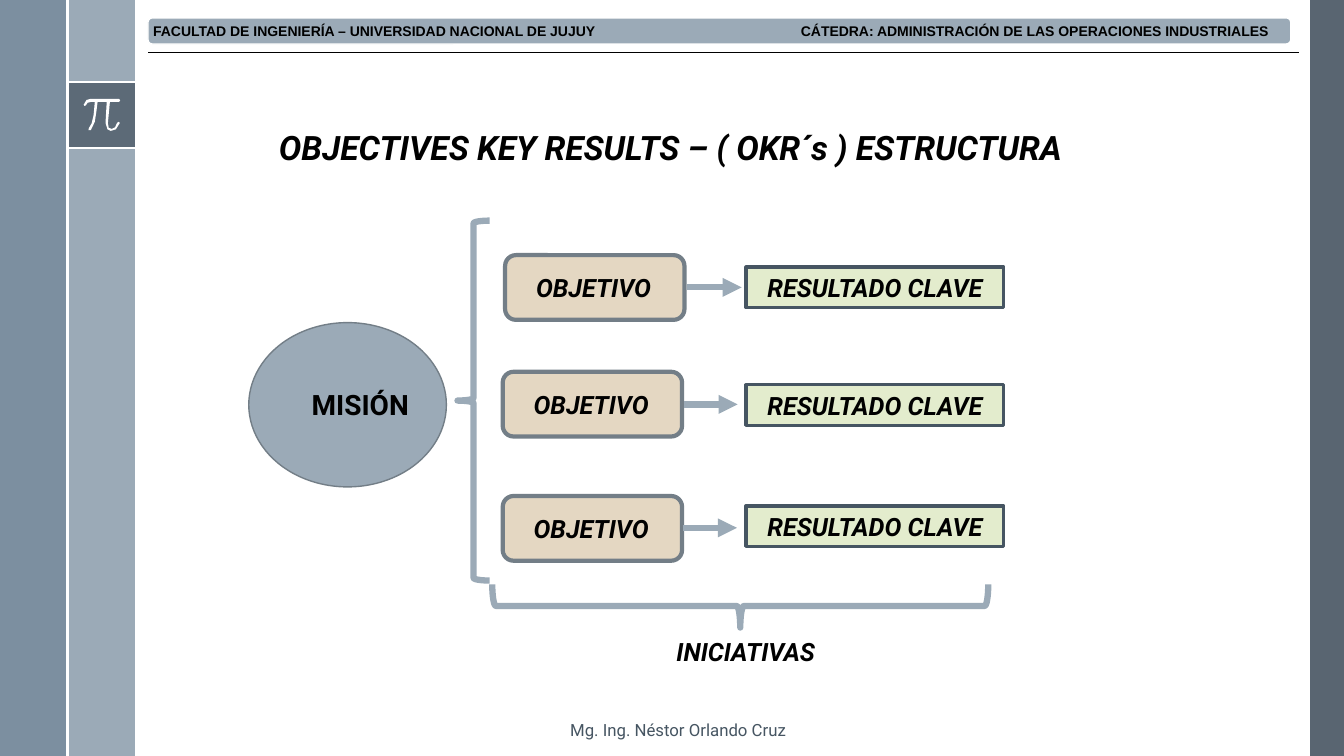
from lxml import etree
from pptx import Presentation
from pptx.dml.color import RGBColor
from pptx.enum.shapes import MSO_CONNECTOR, MSO_SHAPE as Shape
from pptx.enum.text import MSO_ANCHOR, PP_ALIGN as Align
from pptx.oxml.ns import qn
from pptx.util import Cm, Pt

WHITE = RGBColor(0xFF, 0xFF, 0xFF)
BLACK = RGBColor(0x00, 0x00, 0x00)
STEEL = RGBColor(0x9B, 0xAA, 0xB7)
BLUE_GREY = RGBColor(0x6A, 0x80, 0x93)
SLATE = RGBColor(0x47, 0x55, 0x62)
DARK_SLATE = RGBColor(0x46, 0x55, 0x62)
GREY = RGBColor(0x73, 0x7E, 0x87)
SAND = RGBColor(0xE4, 0xD7, 0xC2)
PALE_GREEN = RGBColor(0xE3, 0xEC, 0xCD)

WIDTH, HEIGHT, BAND = 33.87, 19.05, 1.7

# Outline of the pi sign, in hundredths of a centimetre
PI_OUTLINE = [
    (300, 249), (229, 249), (218, 252), (211, 264), (213, 267), (216, 266),
    (221, 259), (229, 257), (239, 257), (236, 290), (231, 311), (224, 323),
    (223, 328), (229, 328), (239, 307), (243, 281), (246, 257), (269, 257),
    (266, 310), (271, 326), (279, 330), (292, 326), (302, 310), (299, 307),
    (295, 310), (290, 321), (282, 325), (274, 322), (272, 310), (277, 257),
    (300, 257), (303, 253),
]

# Objective left and top, result top, arrow start, end and height
OKR_ROWS = [
    (12.73, 6.43, 6.73, 17.32, 18.69, 7.24),
    (12.67, 9.37, 9.7, 17.25, 18.59, 10.19),
    (12.67, 12.5, 12.75, 17.2, 18.57, 13.3),
]


def add_box(slide, kind, left, top, width, height, fill=None, line=None,
            line_width=1, opacity=100):
    box = slide.shapes.add_shape(kind, Cm(left), Cm(top), Cm(width), Cm(height))
    box.shadow.inherit = False
    if fill is None:
        box.fill.background()
    else:
        box.fill.solid()
        box.fill.fore_color.rgb = fill
    if opacity < 100:
        color = box.fill._xPr.find(qn("a:solidFill"))[0]
        etree.SubElement(color, qn("a:alpha"), val=str(opacity * 1000))
    if line is None:
        box.line.fill.background()
    else:
        box.line.color.rgb = line
        box.line.width = Pt(line_width)
    return box


def write(shape, text, size, bold=True, italic=False, color=BLACK,
          align=Align.LEFT, font="Roboto"):
    frame = shape.text_frame
    frame.word_wrap = True
    frame.text = text
    paragraph = frame.paragraphs[0]
    paragraph.alignment = align
    for run in paragraph.runs:
        run.font.name = font
        run.font.size = Pt(size)
        run.font.bold = bold
        run.font.italic = italic
        run.font.color.rgb = color


def set_insets(shape, left, right=0):
    frame = shape.text_frame
    frame.margin_left, frame.margin_right = Cm(left), Cm(right)
    frame.margin_top = frame.margin_bottom = 0
    frame.vertical_anchor = MSO_ANCHOR.MIDDLE


def add_label(slide, left, top, width, height, text, size, **style):
    label = slide.shapes.add_textbox(Cm(left), Cm(top), Cm(width), Cm(height))
    write(label, text, size, **style)


def add_line(slide, x1, y1, x2, y2, color, width, arrow=False):
    line = slide.shapes.add_connector(
        MSO_CONNECTOR.STRAIGHT, Cm(x1), Cm(y1), Cm(x2), Cm(y2))
    line.line.color.rgb = color
    line.line.width = Pt(width)
    if arrow:
        etree.SubElement(line.line._get_or_add_ln(), qn("a:tailEnd"),
                         type="triangle")
    etree.SubElement(line._element.spPr, qn("a:effectLst"))


def add_frame(slide):
    """Side bands and the tile with the pi sign."""
    add_box(slide, Shape.RECTANGLE, 33.02, 0, WIDTH - 33.02, HEIGHT, SLATE,
            opacity=90)
    add_box(slide, Shape.RECTANGLE, BAND, 0, BAND, HEIGHT, STEEL)
    add_box(slide, Shape.RECTANGLE, 0, 0, BAND, HEIGHT, BLUE_GREY, opacity=88)
    add_box(slide, Shape.RECTANGLE, BAND, 2.06, BAND, 1.68, SLATE, opacity=75)
    for y in (2.06, 3.74):
        add_line(slide, BAND, y, 2 * BAND, y, WHITE, 1.5)
    builder = slide.shapes.build_freeform(*PI_OUTLINE[0], scale=Cm(0.01))
    builder.add_line_segments(PI_OUTLINE[1:], close=True)
    pi_sign = builder.convert_to_shape()
    pi_sign.shadow.inherit = False
    pi_sign.fill.solid()
    pi_sign.fill.fore_color.rgb = WHITE
    pi_sign.line.fill.background()
    add_line(slide, BAND, 0, BAND, HEIGHT, WHITE, 1.5)


def add_header(slide):
    header = add_box(slide, Shape.ROUNDED_RECTANGLE, 3.73, 0.45, 28.8, 0.66,
                     STEEL, WHITE)
    write(header, "FACULTAD DE INGENIERÍA – UNIVERSIDAD NACIONAL DE JUJUY\t"
          "CÁTEDRA: ADMINISTRACIÓN DE LAS OPERACIONES INDUSTRIALES",
          10, font="Arial")
    set_insets(header, 0.1)
    properties = header.text_frame.paragraphs[0]._p.get_or_add_pPr()
    tabs = etree.SubElement(properties, qn("a:tabLst"))
    etree.SubElement(tabs, qn("a:tab"), pos=str(Cm(28.1)), algn="r")
    add_line(slide, 3.73, 1.32, 32.74, 1.32, BLACK, 0.5)


def add_okr_row(slide, left, top, result_top, arrow_start, arrow_end, arrow_y):
    objective = add_box(slide, Shape.ROUNDED_RECTANGLE, left, top, 4.52, 1.63,
                        SAND, GREY, 3)
    write(objective, "OBJETIVO", 18, italic=True)
    set_insets(objective, 0.7)
    result = add_box(slide, Shape.RECTANGLE, 18.8, result_top, 6.5, 1.02,
                     PALE_GREEN, DARK_SLATE, 2.25)
    write(result, "RESULTADO CLAVE", 18, italic=True, align=Align.CENTER)
    set_insets(result, 0)
    add_line(slide, arrow_start, arrow_y, arrow_end, arrow_y, STEEL, 4.5,
             arrow=True)


def main():
    prs = Presentation()
    prs.slide_width, prs.slide_height = Cm(WIDTH), Cm(HEIGHT)
    slide = prs.slides.add_slide(prs.slide_layouts[6])

    add_frame(slide)
    add_header(slide)
    add_label(slide, 6.78, 3.07, 22.7, 1.28,
              "OBJECTIVES KEY RESULTS – ( OKR´s ) ESTRUCTURA", 24, italic=True)

    mission = add_box(slide, Shape.OVAL, 6.27, 8.13, 4.98, 4.14, STEEL, GREY)
    write(mission, "MISIÓN", 20, align=Align.CENTER)
    set_insets(mission, 0.64)
    add_box(slide, Shape.LEFT_BRACE, 11.53, 5.56, 0.81, 9.07,
            line=STEEL, line_width=4.5)
    for row in OKR_ROWS:
        add_okr_row(slide, *row)

    initiatives_brace = add_box(slide, Shape.RIGHT_BRACE, 18.11, 9.02, 1.09,
                                12.5, line=STEEL, line_width=4.5)
    initiatives_brace.rotation = 90
    add_label(slide, 15.95, 15.9, 5.69, 1.02, "INICIATIVAS", 18, italic=True,
              align=Align.CENTER)
    add_label(slide, 14.12, 18.01, 8.2, 0.76, "Mg. Ing. Néstor Orlando Cruz",
              12, bold=False, color=DARK_SLATE)

    prs.save("out.pptx")


if __name__ == "__main__":
    main()
